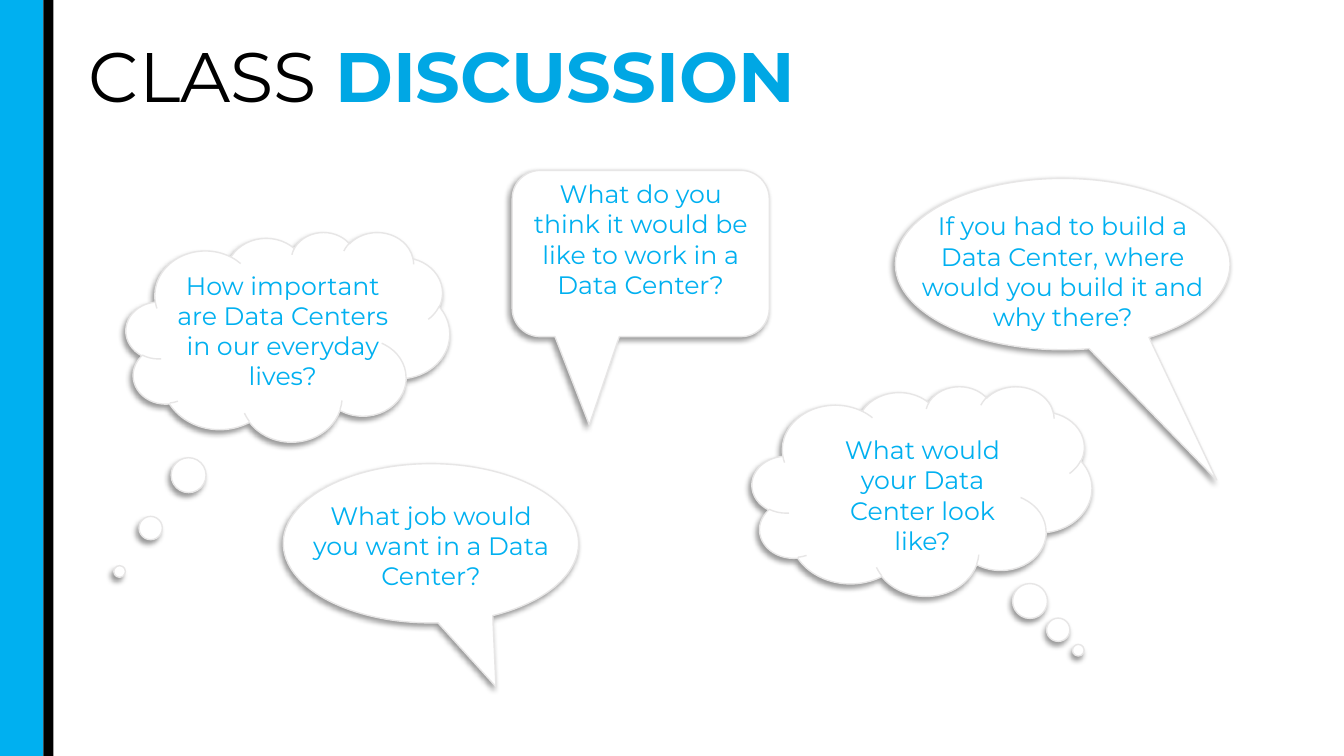
from dataclasses import dataclass

from lxml import etree
from pptx import Presentation
from pptx.dml.color import RGBColor
from pptx.enum.shapes import MSO_SHAPE
from pptx.enum.text import MSO_ANCHOR, MSO_AUTO_SIZE, PP_ALIGN
from pptx.oxml.ns import qn
from pptx.util import Pt

PX = 9144
RECTANGLE = MSO_SHAPE.RECTANGLE
CLOUD = MSO_SHAPE.CLOUD_CALLOUT
ROUNDED = MSO_SHAPE.ROUNDED_RECTANGULAR_CALLOUT
OVAL = MSO_SHAPE.OVAL_CALLOUT
LEFT, CENTER = PP_ALIGN.LEFT, PP_ALIGN.CENTER
TOP = MSO_ANCHOR.TOP
NO_AUTOFIT = MSO_AUTO_SIZE.NONE
TITLE_ONLY = 5


@dataclass(frozen=True)
class Theme:
    """Colours, font and type sizes of the slide."""
    accent: str = "00B0F0"
    title_accent: str = "00A7E4"
    black: str = "000000"
    white: str = "FFFFFF"
    outline: str = "E7E6E6"
    font: str = "Montserrat"
    title_size: int = 50
    question_size: int = 18


THEME = Theme()

# Each entry: preset, callout box, tail adjustments, text box within the callout, question
CALLOUTS = [
    (CLOUD, (125, 230, 321, 208), (-0.52, 1.12), (39, 33, 233, 131),
     "How important are Data Centers in our everyday lives?"),
    (ROUNDED, (508, 169, 255, 165), (-0.2, 1.03, 0.17), (11, 3, 233, 162),
     "What do you think it would be like to work in a Data Center?"),
    (OVAL, (888, 177, 332, 170), (0.46, 1.26), (14, 27, 304, 131),
     "If you had to build a Data Center, where would you build it and why there?"),
    (CLOUD, (746, 383, 337, 208), (0.46, 0.76), (65, 43, 208, 131),
     "What would your Data Center look like?"),
    (OVAL, (281, 460, 293, 158), (0.22, 0.9), (17, 31, 259, 101),
     "What job would you want in a Data Center?"),
]


def emu(box):
    """Turn a box in px into EMU."""
    return [length * PX for length in box]


def style_run(run, size, color, bold=False):
    """Set the font of one run."""
    run.font.name = THEME.font
    run.font.size = Pt(size)
    run.font.bold = bold
    run.font.color.rgb = RGBColor.from_string(color)


def add_bar(slide, box, color):
    """Add one plain vertical bar."""
    bar = slide.shapes.add_shape(RECTANGLE, *emu(box))
    bar.shadow.inherit = False
    bar.fill.solid()
    bar.fill.fore_color.rgb = RGBColor.from_string(color)
    bar.line.fill.background()


def add_side_band(slide, box):
    """Add the blue band with its black edge inside the box."""
    left, top, width, height = box
    edge = 10
    add_bar(slide, (left, top, width - edge, height), THEME.accent)
    add_bar(slide, (left + width - edge, top, edge, height), THEME.black)


def set_title(slide, box):
    """Place the title and format its two words."""
    title = slide.shapes.title
    title.left, title.top, title.width, title.height = emu(box)
    frame = title.text_frame
    frame.auto_size = NO_AUTOFIT
    frame.vertical_anchor = TOP
    paragraph = frame.paragraphs[0]
    paragraph.alignment = LEFT
    for word, color, bold in (("CLASS ", THEME.black, False),
                              ("DISCUSSION", THEME.title_accent, True)):
        run = paragraph.add_run()
        run.text = word
        style_run(run, THEME.title_size, color, bold)


def add_soft_shadow(shape):
    """Give a shape a soft shadow towards the lower left."""
    shape.shadow.inherit = False
    effects = shape._element.spPr.find(qn("a:effectLst"))
    shadow = etree.SubElement(effects, qn("a:outerShdw"), blurRad=str(Pt(4)),
                              dist=str(Pt(3)), dir="8100000", algn="tr",
                              rotWithShape="0")
    color = etree.SubElement(shadow, qn("a:srgbClr"), val=THEME.black)
    etree.SubElement(color, qn("a:alpha"), val="40000")


def add_callout(slide, preset, box, adjustments, text_box, question):
    """Add a speech or thought bubble and the question inside it."""
    bubble = slide.shapes.add_shape(preset, *emu(box))
    for index, value in enumerate(adjustments):
        bubble.adjustments[index] = value
    bubble.fill.solid()
    bubble.fill.fore_color.rgb = RGBColor.from_string(THEME.white)
    bubble.line.color.rgb = RGBColor.from_string(THEME.outline)
    bubble.line.width = Pt(1)
    add_soft_shadow(bubble)

    left, top, width, height = text_box
    label = slide.shapes.add_textbox(*emu((box[0] + left, box[1] + top, width, height)))
    frame = label.text_frame
    frame.word_wrap = True
    frame.text = question
    paragraph = frame.paragraphs[0]
    paragraph.alignment = CENTER
    style_run(paragraph.runs[0], THEME.question_size, THEME.accent)


def build_discussion_slide(presentation):
    """Build the class discussion slide."""
    slide = presentation.slides.add_slide(presentation.slide_layouts[TITLE_ONLY])
    add_side_band(slide, (0, 0, 53, 750))
    set_title(slide, (78, 27, 1041, 94))
    for callout in CALLOUTS:
        add_callout(slide, *callout)


def main():
    """Create and save the presentation."""
    presentation = Presentation()
    presentation.slide_width, presentation.slide_height = emu((1333, 750))
    build_discussion_slide(presentation)
    presentation.save("out.pptx")


if __name__ == "__main__":
    main()
